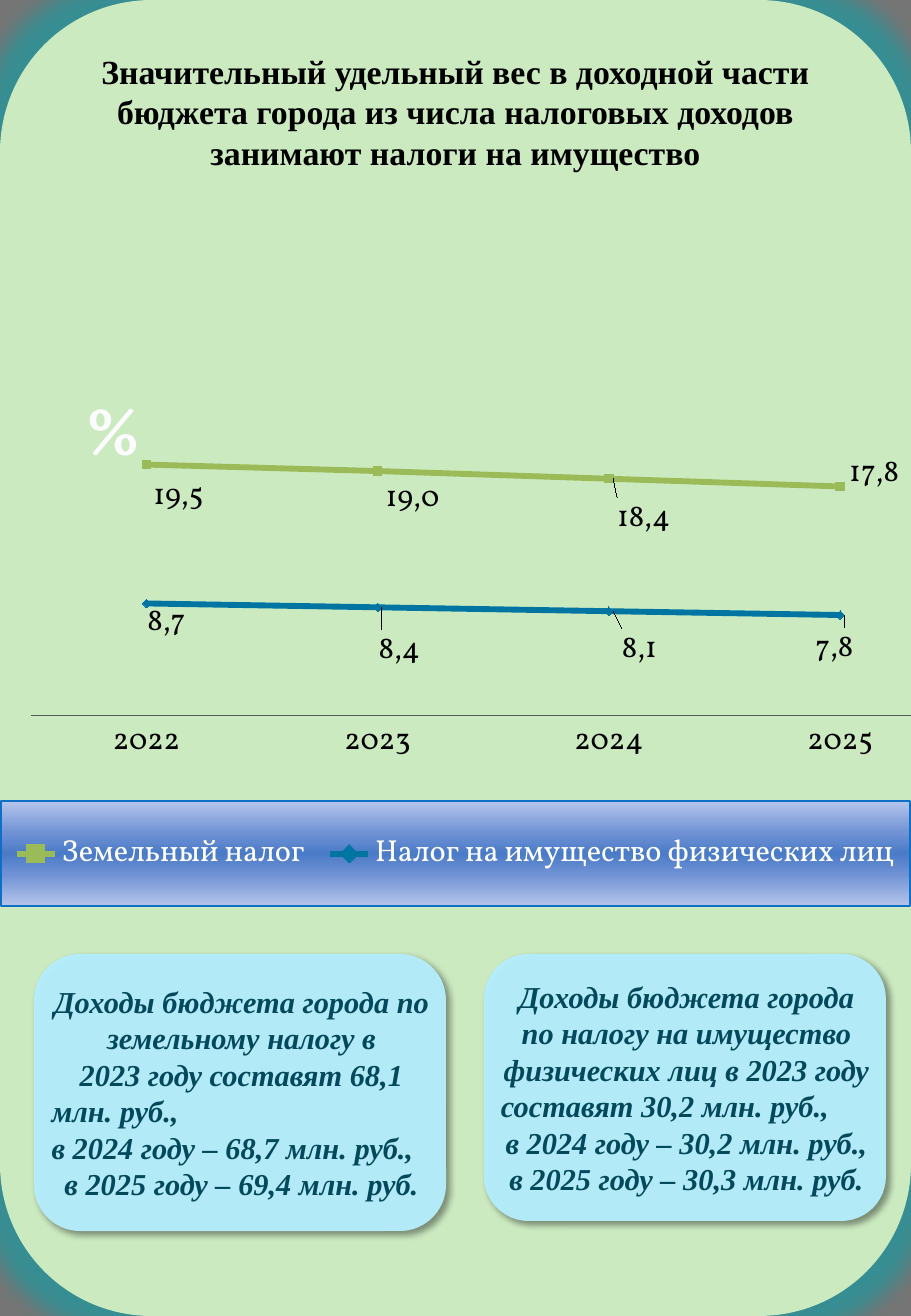
from lxml import etree
from pptx import Presentation
from pptx import util as u
from pptx.chart.data import CategoryChartData
from pptx.dml.color import RGBColor
from pptx.enum import chart as ch, shapes, text
from pptx.oxml import parse_xml
from pptx.oxml.ns import nsdecls, qn

theme = dict(
    back="757575", page="CBEAC0", glow="0F9FA6", card="B5EDFD", ink="03495C",
    black="000000", white="FFFFFF", pale="FCFCFE", axis="595959",
    land="9BBB59", home="0075A2", edge="0F6FC6",
    band=[(0, "B5C5EB"), (30, "7092D4"), (50, "4A7BC7"), (70, "7092D4"), (100, "B5C5EB")],
    serif="Times New Roman", body="Vollkorn", title=20, sign=40, text=18,
)
px = lambda n: u.Emu(round(n * 914400 / 121.5))
rgb = lambda name: RGBColor.from_string(theme[name])


def style(font, face, size, color, bold=False, italic=False):
    font.name, font.size = theme[face], u.Pt(theme[size])
    font.color.rgb, font.bold, font.italic = rgb(color), bold, italic


def place(node, spot, index, mode=""):
    for old in node.findall(qn("c:layout")):
        node.remove(old)
    parts = "".join(f'<c:{key} val="{val:.4f}"/>' for key, val in zip("xywh", spot))
    node.insert(index, parse_xml(
        f'<c:layout {nsdecls("c")}><c:manualLayout>{mode}{parts}</c:manualLayout></c:layout>'))


prs = Presentation()
prs.slide_width, prs.slide_height = px(911), px(1316)
slide = prs.slides.add_slide(prs.slide_layouts[6])
slide.background.fill.solid()
slide.background.fill.fore_color.rgb = rgb("back")

mid, left = text.PP_ALIGN.CENTER, text.PP_ALIGN.LEFT
boxes = [
    ((0, 0, 911, 1316), "page", "title", "black", [
        (mid, "Значительный удельный вес в доходной части бюджета города из числа "
              "налоговых доходов занимают налоги на имущество")]),
    ((34, 954, 412, 277), "card", "text", "ink", [
        (mid, "Доходы бюджета города по земельному налогу в"),
        (mid, "2023 году составят 68,1"),
        (left, "млн. руб.,"),
        (left, "в 2024 году – 68,7 млн. руб.,"),
        (mid, "в 2025 году – 69,4 млн. руб.")]),
    ((484, 954, 402, 267), "card", "text", "ink", [
        (mid, "Доходы бюджета города по налогу на имущество физических лиц в 2023 году"),
        (left, "составят 30,2 млн. руб.,"),
        (mid, "в 2024 году – 30,2 млн. руб.,"),
        (mid, "в 2025 году – 30,3 млн. руб.")]),
]
for spot, fill, size, color, lines in boxes:
    box = slide.shapes.add_shape(shapes.MSO_SHAPE.ROUNDED_RECTANGLE, *map(px, spot))
    box.fill.solid()
    box.fill.fore_color.rgb = rgb(fill)
    box.line.fill.background()
    box.shadow.inherit = False
    if fill == "page":
        effect = (f'<a:glow {nsdecls("a")} rad="300000"><a:srgbClr val="{theme["glow"]}">'
                  '<a:alpha val="60000"/></a:srgbClr></a:glow>')
    else:
        effect = (f'<a:outerShdw {nsdecls("a")} blurRad="50800" dist="38100" dir="2700000" '
                  'algn="tl" rotWithShape="0"><a:srgbClr val="000000">'
                  '<a:alpha val="40000"/></a:srgbClr></a:outerShdw>')
        tint = box.element.spPr.find(qn("a:solidFill"))[0]
        etree.SubElement(tint, qn("a:alpha")).set("val", "97000")
    box.element.spPr.find(qn("a:effectLst")).append(parse_xml(effect))
    frame = box.text_frame
    frame.word_wrap = True
    frame.vertical_anchor = text.MSO_ANCHOR.TOP
    if fill == "card":
        frame.vertical_anchor = text.MSO_ANCHOR.MIDDLE
        frame.margin_left, frame.margin_right = px(4), px(1)
    for i, (align, line) in enumerate(lines):
        para = frame.paragraphs[0] if i == 0 else frame.add_paragraph()
        para.text, para.alignment = line, align
        style(para.font, "serif", size, color, True, fill == "card")

sign = slide.shapes.add_textbox(*map(px, (83, 382, 60, 94))).text_frame
sign.margin_left = sign.margin_right = 0
sign.word_wrap = False
para = sign.paragraphs[0]
para.text, para.alignment = "%", mid
style(para.font, "body", "sign", "pale", True)

wide, high = 958, 514
data = CategoryChartData()
data.categories = ["2022", "2023", "2024", "2025"]
rows = [
    ("Земельный налог", [19.5, 19, 18.4, 17.8], "land", ch.XL_MARKER_STYLE.SQUARE,
     [(-2, 32), (-1, 28), (-1, 40), (0, -13)]),
    ("Налог на имущество физических лиц", [8.7, 8.4, 8.1, 7.8], "home",
     ch.XL_MARKER_STYLE.DIAMOND, [(-8, 20), (-8, 44), (4, 39), (-34, 34)]),
]
for name, vals, *rest in rows:
    data.add_series(name, vals)
chart = slide.shapes.add_chart(
    ch.XL_CHART_TYPE.LINE_MARKERS, *map(px, (0, 393, wide, high)), data).chart
chart.has_title = False
style(chart.font, "body", "text", "black")
chart.plots[0].vary_by_categories = False

value = chart.value_axis
value.minimum_scale, value.maximum_scale = 0, 25
value.has_major_gridlines = value.visible = False
value.tick_labels.number_format = "#,##0.0"
value.tick_labels.number_format_is_linked = False
years = chart.category_axis
years.major_tick_mark = years.minor_tick_mark = ch.XL_TICK_MARK.NONE
years.format.line.color.rgb = rgb("axis")
years.format.line.width = u.Pt(0.5)

for series, (name, vals, color, mark, shifts) in zip(chart.plots[0].series, rows):
    series.smooth = False
    series.format.line.color.rgb = rgb(color)
    series.format.line.width = u.Pt(3.5)
    series.marker.style, series.marker.size = mark, 5
    series.marker.format.fill.solid()
    series.marker.format.fill.fore_color.rgb = rgb(color)
    series.marker.format.line.fill.background()
    series.data_labels.show_value = True
    for i, (val, (dx, dy)) in enumerate(zip(vals, shifts)):
        label = series.points[i].data_label
        label.text_frame.text = f"{val:.1f}".replace(".", ",")
        style(label.text_frame.paragraphs[0].runs[0].font, "body", "text", "black")
        label.position = ch.XL_LABEL_POSITION.RIGHT
        tag = chart.element.xpath(f'.//c:ser[c:tx//c:v="{name}"]//c:dLbl[c:idx/@val="{i}"]')[0]
        place(tag, (dx / wide, dy / high), 1)

for group in chart.element.xpath(".//c:ser/c:dLbls"):
    for lead in group.findall(qn("c:showLeaderLines")):
        group.remove(lead)
    group.append(parse_xml(
        f'<c:extLst {nsdecls("c")}><c:ext uri="{{CE6537A1-D6FC-4f65-9D91-7224C49458BB}}" '
        'xmlns:c15="http://schemas.microsoft.com/office/drawing/2012/chart">'
        '<c15:showLeaderLines val="0"/></c:ext></c:extLst>'))

edge = '<c:xMode val="edge"/><c:yMode val="edge"/>'
area = chart.element.xpath(".//c:plotArea")[0]
place(area, (30 / wide, 1 / high, 926 / wide, 322 / high), 0,
      '<c:layoutTarget val="inner"/>' + edge)

chart.has_legend = True
chart.legend.position = ch.XL_LEGEND_POSITION.TOP
chart.legend.include_in_layout = False
style(chart.legend.font, "body", "text", "white")
key = chart.element.xpath(".//c:legend")[0]
place(key, (0, 409 / high, 910 / wide, 105 / high), 1, edge)
stops = "".join(f'<a:gs pos="{at * 1000}"><a:srgbClr val="{tone}"/></a:gs>'
                for at, tone in theme["band"])
key.find(qn("c:txPr")).addprevious(parse_xml(
    f'<c:spPr {nsdecls("c", "a")}><a:gradFill><a:gsLst>{stops}</a:gsLst>'
    '<a:lin ang="5400000" scaled="0"/></a:gradFill><a:ln w="12700"><a:solidFill>'
    f'<a:srgbClr val="{theme["edge"]}"/></a:solidFill></a:ln></c:spPr>'))

prs.save("out.pptx")
